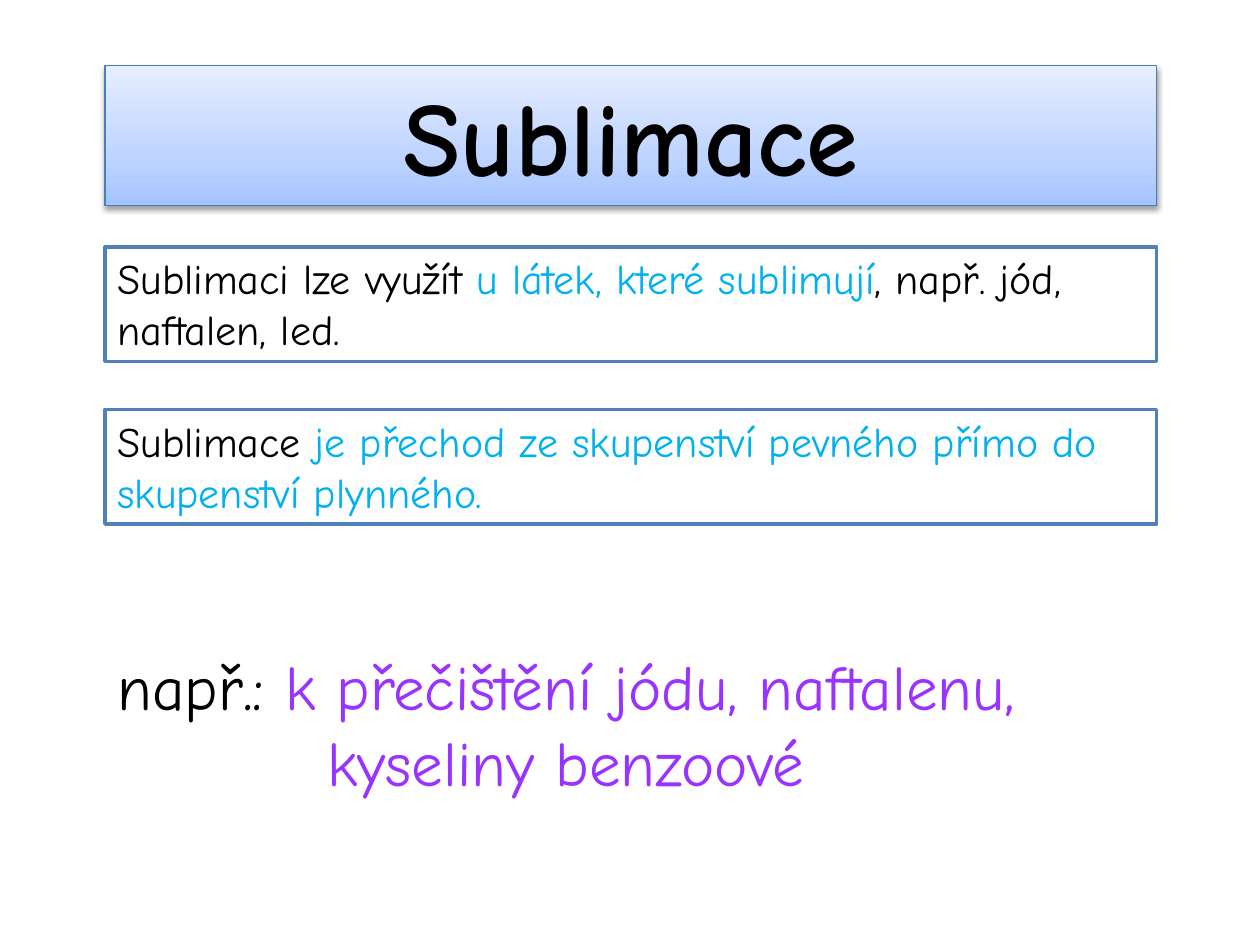
from lxml.etree import SubElement
from pptx import Presentation
from pptx.dml.color import RGBColor
from pptx.enum.shapes import MSO_SHAPE
from pptx.enum.text import MSO_ANCHOR, MSO_AUTO_SIZE, PP_ALIGN
from pptx.oxml.ns import qn
from pptx.util import Pt

FONT = "Comic Neue"
BLACK = RGBColor(0x00, 0x00, 0x00)
WHITE = RGBColor(0xFF, 0xFF, 0xFF)
CYAN = RGBColor(0x00, 0xB0, 0xF0)
VIOLET = RGBColor(0x99, 0x33, 0xFF)
BORDER = RGBColor(0x4F, 0x81, 0xBD)
EDGE = RGBColor(0x4B, 0x7E, 0xBC)
BLUES = [(0, RGBColor(0xA4, 0xC4, 0xFF)),
         (35, RGBColor(0xBF, 0xD4, 0xFF)),
         (100, RGBColor(0xE6, 0xEE, 0xFF))]

LEFT, WIDTH = 60, 601


def add_text(shape, lines, size, bold=False, align=PP_ALIGN.LEFT):
    """Fill a shape with lines, each a list of (words, colour) runs."""
    frame = shape.text_frame
    frame.word_wrap = True
    frame.auto_size = MSO_AUTO_SIZE.SHAPE_TO_FIT_TEXT
    for i, runs in enumerate(lines):
        para = frame.paragraphs[0] if i == 0 else frame.add_paragraph()
        para.alignment = align
        for words, color in runs:
            run = para.add_run()
            run.text = words
            font = run.font
            font.name, font.size, font.bold = FONT, Pt(size), bold
            font.color.rgb = color
    return frame


def add_box(slide, top, height, edge, weight):
    box = slide.shapes.add_shape(
        MSO_SHAPE.RECTANGLE, Pt(LEFT), Pt(top), Pt(WIDTH), Pt(height))
    box.shadow.inherit = False
    box.line.color.rgb = edge
    box.line.width = Pt(weight)
    box.fill.solid()
    box.fill.fore_color.rgb = WHITE
    box.text_frame.vertical_anchor = MSO_ANCHOR.TOP
    return box


def add_blend(box, stops):
    """Fill the box with a gradient that rises from its bottom edge."""
    box.fill.gradient()
    box.fill.gradient_angle = 90
    blend = box._element.spPr.find(".//" + qn("a:gsLst"))
    for old in list(blend):
        blend.remove(old)
    for pos, color in stops:
        stop = SubElement(blend, qn("a:gs"), pos=str(pos * 1000))
        SubElement(stop, qn("a:srgbClr"), val=str(color))


def add_shade(box):
    """Cast a soft shadow straight down."""
    effects = box._element.spPr.find(qn("a:effectLst"))
    shade = SubElement(effects, qn("a:outerShdw"), blurRad=str(Pt(3.1)),
                       dist=str(Pt(1.6)), dir="5400000", rotWithShape="0")
    color = SubElement(shade, qn("a:srgbClr"), val=str(BLACK))
    SubElement(color, qn("a:alpha"), val="38000")


def add_title(slide, words):
    box = add_box(slide, 37.5, 80, EDGE, 0.75)
    add_blend(box, BLUES)
    add_shade(box)
    add_text(box, [[(words, BLACK)]], 60, True, PP_ALIGN.CENTER)


def add_note(slide, top, runs):
    add_text(add_box(slide, top, 65.5, BORDER, 2), [runs], 24)


def add_uses(slide, top, lines, indent):
    box = slide.shapes.add_textbox(Pt(LEFT), Pt(top), Pt(604), Pt(94.5))
    frame = add_text(box, lines, 36)
    # Later lines hang under the first line's list
    for para in frame.paragraphs[1:]:
        para._p.get_or_add_pPr().set("marL", str(Pt(indent)))


def main():
    deck = Presentation()
    deck.slide_width, deck.slide_height = Pt(720), Pt(540)
    slide = deck.slides.add_slide(deck.slide_layouts[6])

    # Heading
    add_title(slide, "Sublimace")

    # Framed notes
    add_note(slide, 234, [
        ("Sublimace ", BLACK),
        ("je přechod ze skupenství pevného přímo do skupenství plynného.",
         CYAN)])
    add_note(slide, 141, [
        ("Sublimaci lze využít ", BLACK),
        ("u látek, které sublimují", CYAN),
        (", např. jód, naftalen, led.", BLACK)])

    # Example uses
    add_uses(slide, 366.5, [
        [("např.: ", BLACK), ("k přečištění jódu, naftalenu,", VIOLET)],
        [("kyseliny benzoové", VIOLET)]], 120)

    deck.save("out.pptx")


if __name__ == "__main__":
    main()
